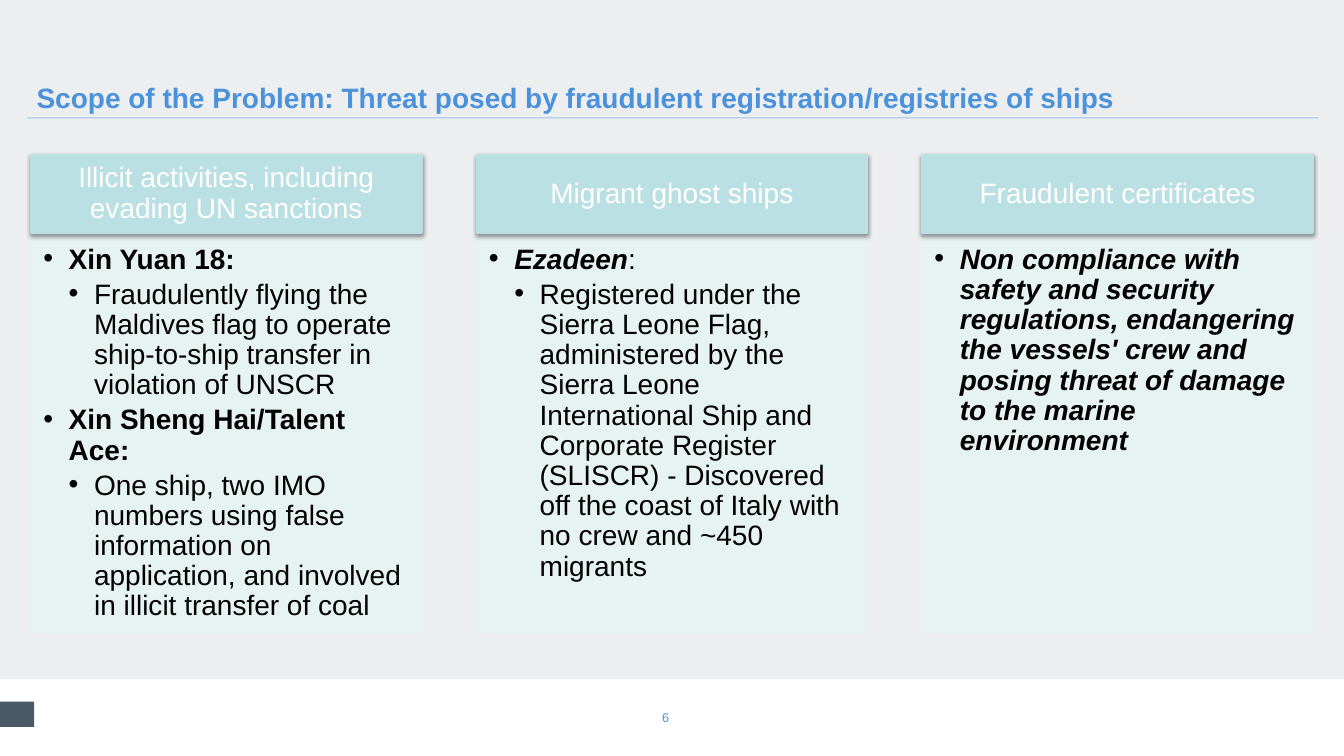
from lxml import etree
from pptx import Presentation
from pptx.dml.color import RGBColor
from pptx.enum.shapes import MSO_CONNECTOR, MSO_SHAPE
from pptx.enum.text import MSO_ANCHOR, MSO_AUTO_SIZE, PP_ALIGN
from pptx.oxml.ns import qn
from pptx.util import Cm, Pt

RECTANGLE = MSO_SHAPE.RECTANGLE
STRAIGHT = MSO_CONNECTOR.STRAIGHT
TOP, MIDDLE, BOTTOM = MSO_ANCHOR.TOP, MSO_ANCHOR.MIDDLE, MSO_ANCHOR.BOTTOM
LEFT, CENTER = PP_ALIGN.LEFT, PP_ALIGN.CENTER
NO_AUTOFIT = MSO_AUTO_SIZE.NONE

BACKGROUND = RGBColor(0xED, 0xEE, 0xF0)
WHITE = RGBColor(0xFF, 0xFF, 0xFF)
BLACK = RGBColor(0x00, 0x00, 0x00)
SLATE = RGBColor(0x49, 0x59, 0x65)
BLUE = RGBColor(0x4B, 0x92, 0xDB)
TEAL = RGBColor(0xBB, 0xE0, 0xE3)
PALE_TEAL = RGBColor(0xE7, 0xF3, 0xF4)

COMPARISON_LAYOUT = 4
UNUSED_PLACEHOLDER = 3
COLUMN_LEFT, COLUMN_PITCH, COLUMN_WIDTH = 0.79, 11.23, 9.83
HEADER_TOP, HEADER_HEIGHT = 3.91, 1.96
LIST_TOP, LIST_HEIGHT = 5.87, 10.06
INDENT = 0.64

COLUMNS = [
    (1, "Illicit activities, including evading UN sanctions", [
        (1, [("Xin Yuan 18:", {"bold": True})]),
        (2, [("Fraudulently flying the Maldives flag to operate ship-to-ship "
              "transfer in violation of UNSCR", {})]),
        (1, [("Xin Sheng Hai/Talent Ace:", {"bold": True})]),
        (2, [("One ship, two IMO numbers using false information on "
              "application, and involved in illicit transfer of coal", {})]),
    ]),
    (2, "Migrant ghost ships", [
        (1, [("Ezadeen", {"bold": True, "italic": True}), (":", {})]),
        (2, [("Registered under the Sierra Leone Flag, administered by the "
              "Sierra Leone International Ship and Corporate Register "
              "(SLISCR) - Discovered off the coast of Italy with no crew "
              "and ~450 migrants", {})]),
    ]),
    (4, "Fraudulent certificates", [
        (1, [("Non compliance with safety and security regulations, "
              "endangering the vessels' crew and posing threat of damage to "
              "the marine environment", {"bold": True, "italic": True})]),
    ]),
]


def add_run(p, text, size=20, color=BLACK, bold=False, italic=False):
    r = p.add_run()
    r.text = text
    r.font.name = "Arial"
    r.font.size = Pt(size)
    r.font.color.rgb = color
    r.font.bold = bold
    r.font.italic = italic


def set_frame(s, insets, anchor):
    tf = s.text_frame
    tf.word_wrap = True
    tf.auto_size = NO_AUTOFIT
    tf.vertical_anchor = anchor
    tf.margin_left, tf.margin_top, tf.margin_right, tf.margin_bottom = map(Cm, insets)
    return tf


def place(s, left, top, width, height):
    s.left, s.top, s.width, s.height = map(Cm, (left, top, width, height))


def set_alpha(fill_parent, percent):
    color = fill_parent.find(".//" + qn("a:srgbClr"))
    etree.SubElement(color, qn("a:alpha"), val=str(percent * 1000))


def add_rectangle(slide, left, top, width, height, color):
    s = slide.shapes.add_shape(RECTANGLE, *map(Cm, (left, top, width, height)))
    s.shadow.inherit = False
    s.fill.solid()
    s.fill.fore_color.rgb = color
    s.line.fill.background()
    return s


def add_shadow(s):
    effects = s._element.spPr.find(qn("a:effectLst"))
    shadow = etree.SubElement(effects, qn("a:outerShdw"), blurRad=str(Pt(3.1)),
                              dist=str(Pt(1.6)), dir="5400000", rotWithShape="0")
    color = etree.SubElement(shadow, qn("a:srgbClr"), val=str(BLACK))
    etree.SubElement(color, qn("a:alpha"), val="38000")


def add_header(slide, left, text):
    s = add_rectangle(slide, left, HEADER_TOP, COLUMN_WIDTH, HEADER_HEIGHT, TEAL)
    s.line.color.rgb = TEAL
    s.line.width = Pt(2)
    add_shadow(s)
    p = set_frame(s, (0.41, 0.23, 0.41, 0.23), MIDDLE).paragraphs[0]
    p.alignment = CENTER
    p.line_spacing = 0.9
    add_run(p, text, color=WHITE)


def format_bullet(p, level):
    p.level = level - 1
    pPr = p._p.get_or_add_pPr()
    pPr.set("marL", str(Cm(INDENT * level)))
    pPr.set("indent", str(-Cm(INDENT)))
    etree.SubElement(pPr, qn("a:buFont"), typeface="Arial")
    etree.SubElement(pPr, qn("a:buChar"), char="•")
    p.alignment = LEFT
    p.line_spacing = 0.9
    p.space_before = Pt(0)
    p.space_after = Pt(3.4)


def fill_list(s, left, items):
    place(s, left, LIST_TOP, COLUMN_WIDTH, LIST_HEIGHT)
    s.fill.solid()
    s.fill.fore_color.rgb = PALE_TEAL
    s.line.color.rgb = PALE_TEAL
    s.line.width = Pt(2)
    spPr = s._element.spPr
    set_alpha(spPr.find(qn("a:solidFill")), 90)
    set_alpha(spPr.find(qn("a:ln")), 90)
    tf = set_frame(s, (0.3, 0.3, 0.41, 0.43), TOP)
    for i, (level, runs) in enumerate(items):
        p = tf.add_paragraph() if i else tf.paragraphs[0]
        format_bullet(p, level)
        for text, style in runs:
            add_run(p, text, **style)


def fill_title(slide, text):
    s = slide.shapes.title
    place(s, 0.69, 0.61, 32.51, 2.36)
    p = set_frame(s, (0.23, 0.1, 0.23, 0.1), BOTTOM).paragraphs[0]
    p.alignment = LEFT
    add_run(p, text, color=BLUE, bold=True)


def add_title_rule(slide):
    rule = slide.shapes.add_connector(STRAIGHT, Cm(0.69), Cm(2.97), Cm(33.22), Cm(2.97))
    rule.line.color.rgb = BLUE
    rule.line.width = Pt(0.75)
    spPr = rule._element.spPr
    set_alpha(spPr.find(qn("a:ln")), 50)
    etree.SubElement(spPr, qn("a:effectLst"))


def add_footer(slide, number):
    add_rectangle(slide, 0, 17.12, 33.87, 1.93, WHITE)
    add_rectangle(slide, 0, 17.68, 0.86, 0.64, SLATE)
    s = slide.shapes.add_textbox(Cm(15.62), Cm(17.75), Cm(2.31), Cm(0.84))
    p = set_frame(s, (0.3, 0.15, 0.3, 0.15), TOP).paragraphs[0]
    p.alignment = CENTER
    add_run(p, number, size=9, color=BLUE)


def main():
    prs = Presentation()
    prs.slide_width, prs.slide_height = Cm(33.87), Cm(19.05)
    slide = prs.slides.add_slide(prs.slide_layouts[COMPARISON_LAYOUT])
    slide.background.fill.solid()
    slide.background.fill.fore_color.rgb = BACKGROUND

    placeholders = {s.placeholder_format.idx: s for s in slide.placeholders}
    unused = placeholders[UNUSED_PLACEHOLDER]._element
    unused.getparent().remove(unused)

    add_footer(slide, "6")
    add_title_rule(slide)
    fill_title(slide, "Scope of the Problem: Threat posed by fraudulent "
                      "registration/registries of ships")
    for i, (idx, header, items) in enumerate(COLUMNS):
        left = COLUMN_LEFT + i * COLUMN_PITCH
        add_header(slide, left, header)
        fill_list(placeholders[idx], left, items)
    prs.save("out.pptx")


if __name__ == "__main__":
    main()
